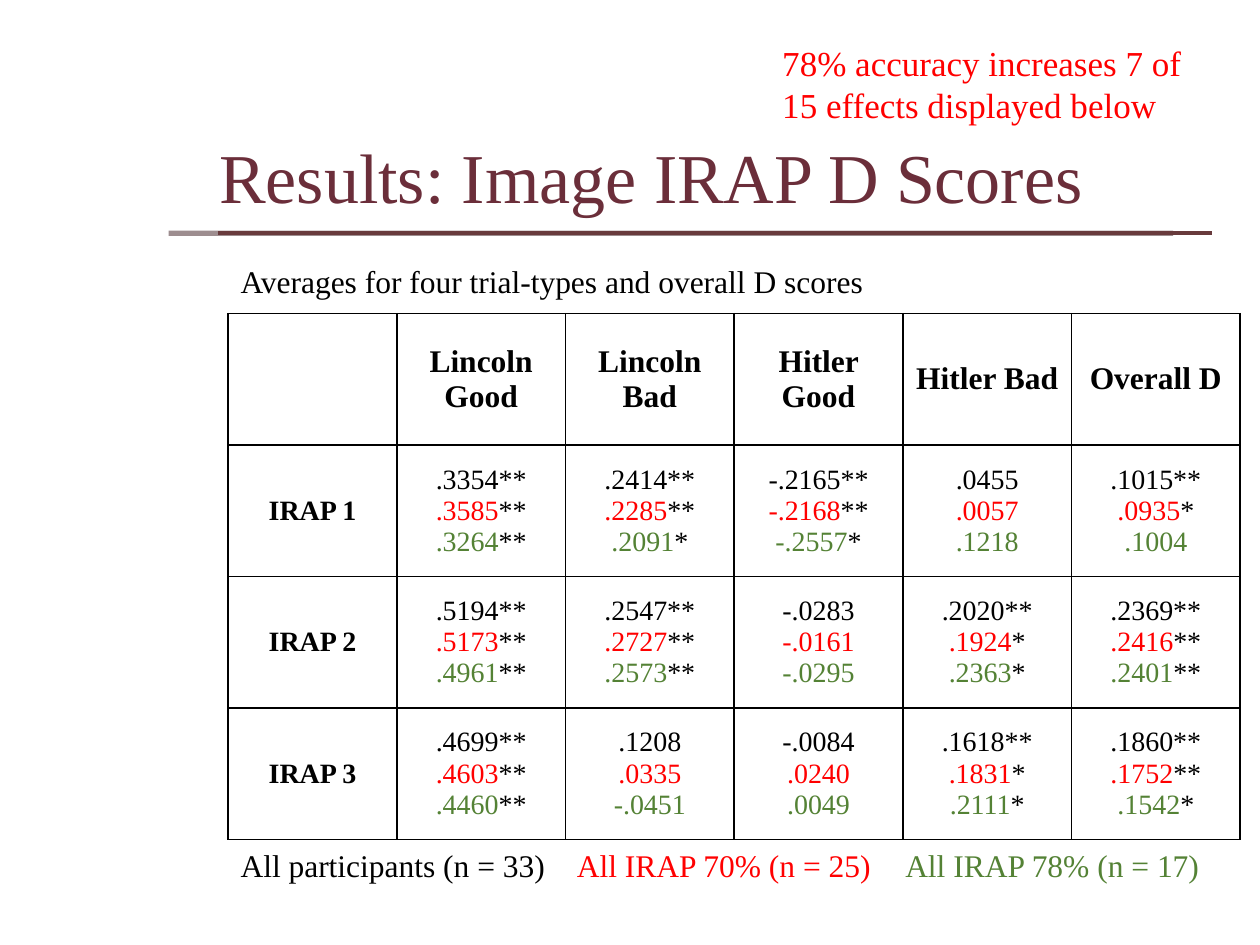
from dataclasses import dataclass

from lxml.etree import SubElement
from pptx import Presentation
from pptx.dml.color import RGBColor
from pptx.enum.shapes import MSO_CONNECTOR as Connector
from pptx.enum.text import MSO_ANCHOR as Anchor, PP_ALIGN as Align
from pptx.oxml import parse_xml
from pptx.oxml.ns import nsdecls, qn
from pptx.util import Cm, Pt


@dataclass(frozen=True)
class Theme:
    font: str = "Times New Roman"
    title: str = "6B2E3A"
    text: str = "000000"
    red: str = "FF0000"
    green: str = "548235"
    rule_back: str = "3C1C21"
    rule_front: str = "683A3C"
    title_size: int = 40
    note_size: int = 20
    body_size: int = 18
    cell_size: int = 16


theme = Theme()


def add_run(paragraph, text, size, color, bold=False):
    run = paragraph.add_run()
    run.text = text
    formats = {"name": theme.font, "size": Pt(size), "bold": bold}
    for name, value in formats.items():
        setattr(run.font, name, value)
    run.font.color.rgb = RGBColor.from_string(color)


def add_text(slide, left, top, width, height, runs, size):
    frame = slide.shapes.add_textbox(Cm(left), Cm(top), Cm(width), Cm(height)).text_frame
    frame.word_wrap = True
    for text, color in runs:
        add_run(frame.paragraphs[0], text, size, color)
    return frame


presentation = Presentation()
presentation.slide_width, presentation.slide_height = Cm(25.4), Cm(19.05)
slide = presentation.slides.add_slide(presentation.slide_layouts[6])

# Rules under the title: left, right, colour, width, opacity in percent
for left, right, color, width, opacity in [
    (3.4, 23.65, theme.rule_back, 3, 50),
    (4.4, 24.43, theme.rule_front, 2.5, 100),
]:
    rule = slide.shapes.add_connector(Connector.STRAIGHT, Cm(left), Cm(4.7), Cm(right), Cm(4.7))
    rule.line.width = Pt(width)
    rule.line.color.rgb = RGBColor.from_string(color)
    if opacity < 100:
        fill_color = rule.line._ln.find(".//" + qn("a:srgbClr"))
        SubElement(fill_color, qn("a:alpha"), val=str(opacity * 1000))
    SubElement(rule._element.spPr, qn("a:effectLst"))

# Title
title = add_text(slide, 4.17, 1.02, 19.48, 3.68,
                 [("Results: Image IRAP D Scores", theme.title)], theme.title_size)
title.vertical_anchor = Anchor.BOTTOM
title.margin_bottom = Cm(0.3)
title.paragraphs[0].line_spacing = 0.9

# Table of scores: one line for each participant group in every cell
headers = ["", "Lincoln Good", "Lincoln Bad", "Hitler Good", "Hitler Bad", "Overall D"]
scores = {
    "IRAP 1": [".3354** .3585** .3264**", ".2414** .2285** .2091*",
               "-.2165** -.2168** -.2557*", ".0455 .0057 .1218", ".1015** .0935* .1004"],
    "IRAP 2": [".5194** .5173** .4961**", ".2547** .2727** .2573**",
               "-.0283 -.0161 -.0295", ".2020** .1924* .2363*", ".2369** .2416** .2401**"],
    "IRAP 3": [".4699** .4603** .4460**", ".1208 .0335 -.0451",
               "-.0084 .0240 .0049", ".1618** .1831* .2111*", ".1860** .1752** .1542*"],
}
group_colors = [theme.text, theme.red, theme.green]
column_width, row_height = 3.4, 2.65
row_count, column_count = len(scores) + 1, len(headers)
table = slide.shapes.add_table(
    row_count, column_count, Cm(4.6), Cm(6.32),
    Cm(column_width * column_count), Cm(row_height * row_count)).table
table.first_row = table.horz_banding = False
for column in table.columns:
    column.width = Cm(column_width)
for row in table.rows:
    row.height = Cm(row_height)

for index, header in enumerate(headers):
    if header:
        add_run(table.cell(0, index).text_frame.paragraphs[0], header,
                theme.body_size, theme.text, bold=True)

for row_index, (label, entries) in enumerate(scores.items(), start=1):
    add_run(table.cell(row_index, 0).text_frame.paragraphs[0], label,
            theme.cell_size, theme.text, bold=True)
    for column_index, entry in enumerate(entries, start=1):
        frame = table.cell(row_index, column_index).text_frame
        for line, (score, color) in enumerate(zip(entry.split(), group_colors)):
            paragraph = frame.add_paragraph() if line else frame.paragraphs[0]
            value = score.rstrip("*")
            add_run(paragraph, value, theme.cell_size, color)
            if score != value:
                add_run(paragraph, score[len(value):], theme.cell_size, theme.text)

# Cell alignment, fill and borders
for cell in table.iter_cells():
    cell.vertical_anchor = Anchor.MIDDLE
    cell.fill.background()
    for paragraph in cell.text_frame.paragraphs:
        paragraph.alignment = Align.CENTER
    properties = cell._tc.get_or_add_tcPr()
    for position, side in enumerate(["lnL", "lnR", "lnT", "lnB"]):
        properties.insert(position, parse_xml(
            f'<a:{side} {nsdecls("a")} w="{Pt(1)}"><a:solidFill>'
            f'<a:srgbClr val="{theme.text}"/></a:solidFill></a:{side}>'))

# Legend, with tab stops between the groups
legend = add_text(slide, 4.6, 16.94, 20.35, 1.02, [
    ("All participants (n = 33)\t", theme.text),
    ("All IRAP 70% (n = 25)\t", theme.red),
    ("All IRAP 78% (n = 17)", theme.green),
], theme.body_size)
tab_list = SubElement(legend.paragraphs[0]._p.get_or_add_pPr(), qn("a:tabLst"))
for stop in (6.78, 13.4):
    SubElement(tab_list, qn("a:tab"), pos=str(Cm(stop)), algn="l")

# Caption and accuracy note
add_text(slide, 4.6, 5.16, 19.79, 1.02,
         [("Averages for four trial-types and overall D scores", theme.text)], theme.body_size)
add_text(slide, 15.52, 0.71, 9.42, 1.96,
         [("78% accuracy increases 7 of 15 effects displayed below", theme.red)], theme.note_size)

presentation.save("out.pptx")
